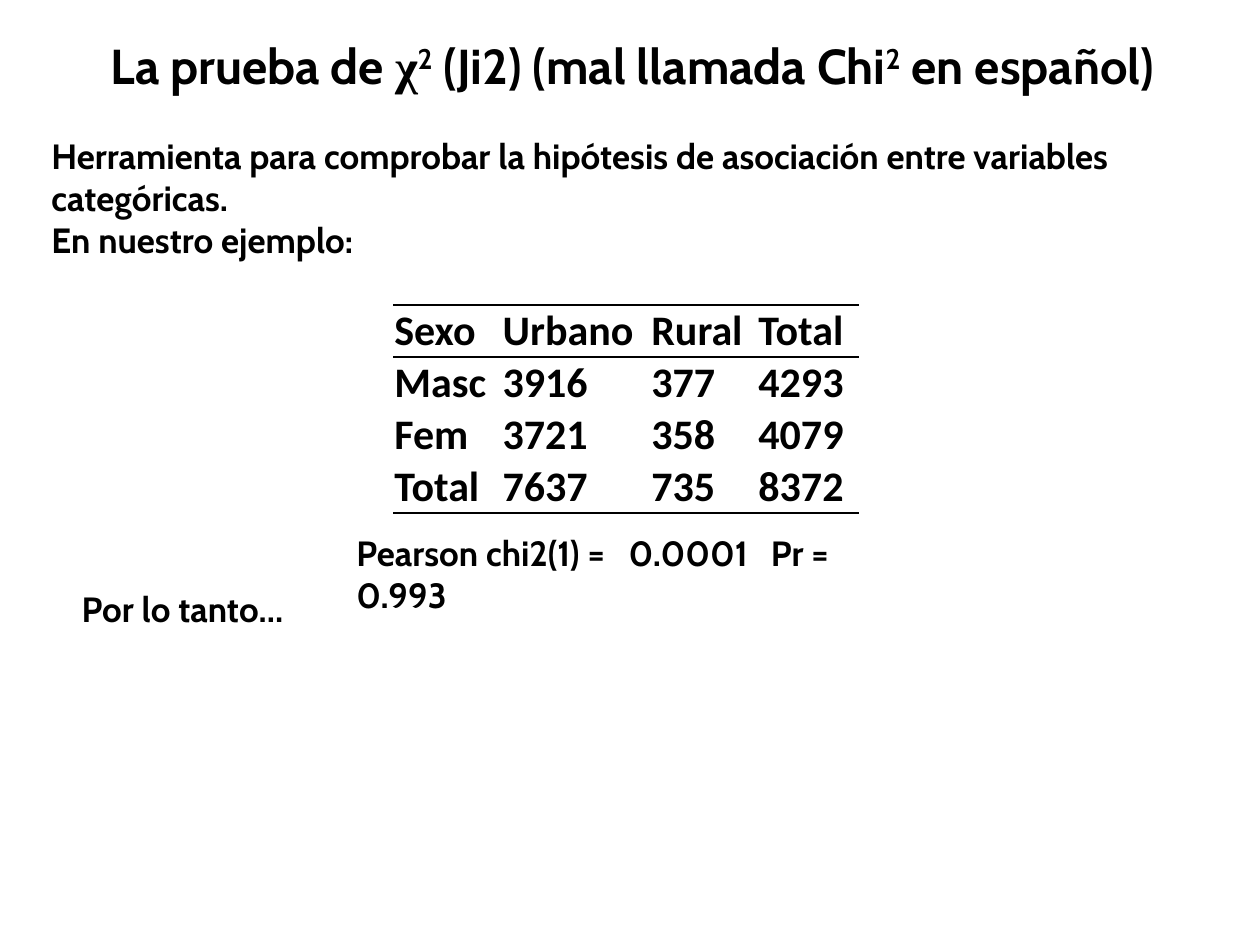
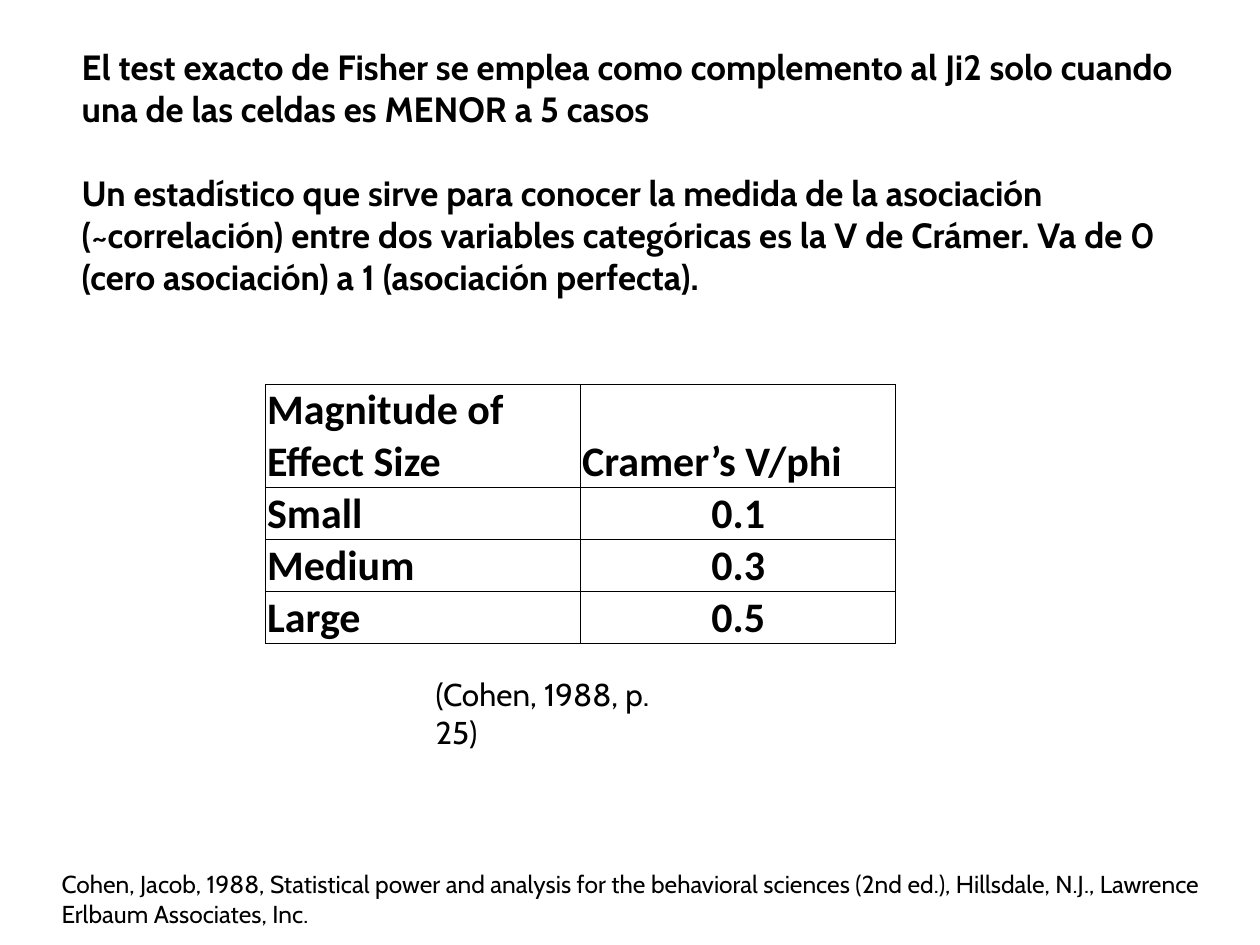
from dataclasses import dataclass

from lxml.etree import SubElement
from pptx import Presentation
from pptx.dml.color import RGBColor
from pptx.enum.text import MSO_ANCHOR, MSO_AUTO_SIZE, PP_ALIGN
from pptx.oxml.ns import qn
from pptx.util import Inches, Pt


@dataclass(frozen=True)
class Theme:
    ink: str = "000000"
    text_font: str = "Cabin"
    table_font: str = "Calibri"
    symbol_font: str = "Times New Roman"
    title_size: int = 28
    table_size: int = 24
    body_size: int = 20
    citation_size: int = 18
    reference_size: int = 14
    paragraph_gap: int = 24


theme = Theme()
ink = RGBColor.from_string(theme.ink)

presentation = Presentation()
presentation.slide_width, presentation.slide_height = Inches(10), Inches(7.5)

# The grid has 100 columns and 100 rows
COLUMN = presentation.slide_width / 100
ROW = presentation.slide_height / 100


def write_text(shape, box, paragraphs, size, bold=True, gap=0, tabs=()):
    """Place a shape on the grid and fill it; each paragraph is a list of runs."""
    left, top, width, height = box
    shape.left, shape.top = int(left * COLUMN), int(top * ROW)
    shape.width, shape.height = int(width * COLUMN), int(height * ROW)
    frame = shape.text_frame
    frame.word_wrap = True
    frame.auto_size = MSO_AUTO_SIZE.NONE
    frame.vertical_anchor = MSO_ANCHOR.TOP
    for index, run_texts in enumerate(paragraphs):
        paragraph = frame.add_paragraph() if index else frame.paragraphs[0]
        paragraph.alignment = PP_ALIGN.LEFT
        paragraph.space_before = Pt(gap if index else 0)
        if tabs:
            tab_list = SubElement(paragraph._p.get_or_add_pPr(), qn("a:tabLst"))
            for position in tabs:
                SubElement(tab_list, qn("a:tab"), pos=str(int(position * COLUMN)), algn="l")
        for run_text in run_texts:
            run = paragraph.add_run()
            run.text = run_text
            font = run.font
            font.name = theme.symbol_font if run_text == "χ" else theme.text_font
            font.size, font.bold = Pt(size), bold
            font.color.rgb = ink
            if run_text == "2":
                run._r.get_or_add_rPr().set("baseline", "30000")


def add_ruled_table(slide, left, top, column_widths, row_heights, rows, border_width, centred=()):
    """Add a table; border_width(side, row) gives points, or 0 for no line."""
    table = slide.shapes.add_table(
        len(rows), len(column_widths), int(left * COLUMN), int(top * ROW),
        int(sum(column_widths) * COLUMN), int(sum(row_heights) * ROW)).table
    table.first_row = table.horz_banding = False
    for table_column, width in zip(table.columns, column_widths):
        table_column.width = int(width * COLUMN)
    for row_index, (values, height) in enumerate(zip(rows, row_heights)):
        table.rows[row_index].height = int(height * ROW)
        for column_index, value in enumerate(values):
            cell = table.cell(row_index, column_index)
            cell.margin_left = cell.margin_right = Inches(0.01)
            cell.margin_top = Pt(0.4)
            cell.margin_bottom = 0
            cell.vertical_anchor = MSO_ANCHOR.BOTTOM
            cell.text = value
            paragraph = cell.text_frame.paragraphs[0]
            is_centred = row_index > 0 and column_index in centred
            paragraph.alignment = PP_ALIGN.CENTER if is_centred else PP_ALIGN.LEFT
            font = paragraph.runs[0].font
            font.name, font.size, font.bold = theme.table_font, Pt(theme.table_size), True
            font.color.rgb = ink
            # Borders come before the fill in the cell properties
            properties = cell._tc.get_or_add_tcPr()
            for side in "LRTB":
                points = border_width(side, row_index)
                line = SubElement(properties, qn(f"a:ln{side}"), w=str(Pt(points)))
                if points:
                    fill = SubElement(line, qn("a:solidFill"))
                    SubElement(fill, qn("a:srgbClr"), val=theme.ink)
                else:
                    SubElement(line, qn("a:noFill"))
            cell.fill.background()


# Slide 1: the chi-squared test
TITLE_ONLY, BLANK = presentation.slide_layouts[5], presentation.slide_layouts[6]
slide = presentation.slides.add_slide(TITLE_ONLY)
write_text(
    slide.shapes.title, (7.8, 3.07, 86.7, 7.6),
    [["La prueba de ", "χ", "2", " (Ji2) (mal llamada Chi", "2", " en español)"]],
    theme.title_size)

write_text(
    slide.shapes.add_textbox(0, 0, 0, 0), (3.1, 13.6, 91.4, 14.8),
    [["Herramienta para comprobar la hipótesis de asociación entre variables categóricas."],
     ["En nuestro ejemplo:"]], theme.body_size)

# Contingency table: rules above and below, and under the header
sex_by_area = [
    ["Sexo", "Urbano", "Rural", "Total"],
    ["Masc", "3916", "377", "4293"],
    ["Fem", "3721", "358", "4079"],
    ["Total", "7637", "735", "8372"],
]
horizontal_rules = {("T", 0): 1.5, ("B", 0): 1, ("T", 1): 1, ("B", 3): 1.5}
add_ruled_table(
    slide, 31.2, 32.27, [8.6, 11.8, 8.5, 8.1], [5.4] * 4, sex_by_area,
    lambda side, row: horizontal_rules.get((side, row), 0))

# Test result and conclusion
write_text(
    slide.shapes.add_textbox(0, 0, 0, 0), (27.3, 55.6, 45.8, 5.87),
    [["Pearson chi2(1) =\t0.0001\tPr = 0.993"]], theme.body_size, tabs=(21.6, 32.9))
write_text(
    slide.shapes.add_textbox(0, 0, 0, 0), (5.5, 61.47, 88.3, 5.87),
    [["Por lo tanto…"]], theme.body_size)

# Slide 2: Fisher's test and Cramér's V
slide = presentation.slides.add_slide(BLANK)
write_text(
    slide.shapes.add_textbox(0, 0, 0, 0), (5.5, 4.13, 89.1, 36.4),
    [["El test exacto de Fisher se emplea como complemento al Ji2 solo cuando una de las "
      "celdas es MENOR a 5 casos"],
     ["Un estadístico que sirve para conocer la medida de la asociación (~correlación) entre "
      "dos variables categóricas es la V de Crámer. Va de 0 (cero asociación) a 1 "
      "(asociación perfecta)."]], theme.body_size, gap=theme.paragraph_gap)

# Effect sizes in a full grid of thin lines
effect_sizes = [
    ["Magnitude of Effect Size", "Cramer’s V/phi"],
    ["Small", "0.1"],
    ["Medium", "0.3"],
    ["Large", "0.5"],
]
add_ruled_table(
    slide, 21.1, 40.67, [25, 25], [10.6] + [5.4] * 3, effect_sizes,
    lambda side, row: 0.5, centred=(1,))

# Citation and reference
write_text(
    slide.shapes.add_textbox(0, 0, 0, 0), (33.6, 70.8, 22.6, 5.33),
    [["(Cohen, 1988, p. 25)"]], theme.citation_size, bold=False)
write_text(
    slide.shapes.add_textbox(0, 0, 0, 0), (3.9, 91.33, 93, 7.6),
    [["Cohen, Jacob, 1988, Statistical power and analysis for the behavioral sciences "
      "(2nd ed.), Hillsdale, N.J., Lawrence Erlbaum Associates, Inc."]],
    theme.reference_size, bold=False)

presentation.save("out.pptx")
